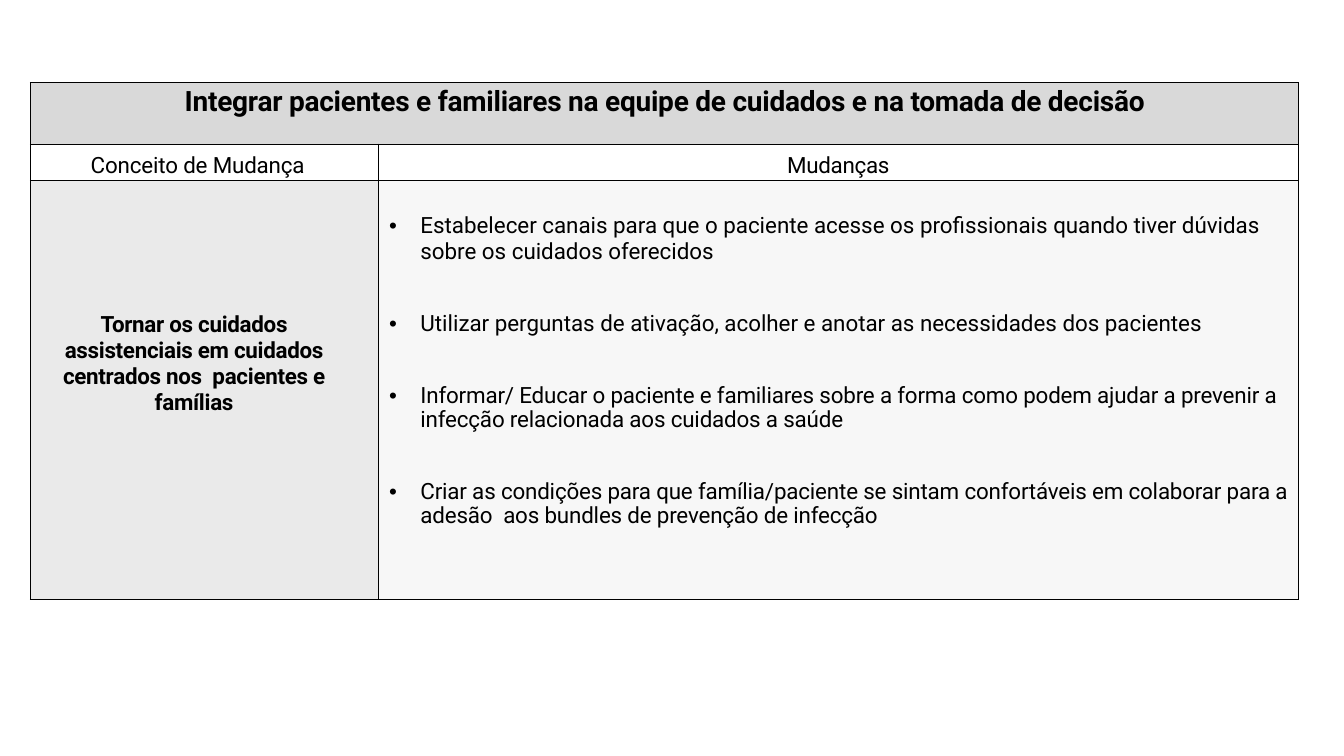
from pptx import Presentation
from pptx.dml.color import RGBColor
from pptx.enum.text import PP_ALIGN
from pptx.oxml.ns import qn
from pptx.util import Inches, Pt
from lxml.etree import SubElement

HEX = {"ink": "000000", "head": "D9D9D9", "plain": "FFFFFF",
       "concept": "EAEAEA", "changes": "F7F7F7"}
FONT = "Roboto"
CHANGES = [
    ("Estabelecer canais para que o paciente acesse os profissionais quando "
     "tiver dúvidas sobre os cuidados oferecidos", 0),
    ("Utilizar perguntas de ativação, acolher e anotar as necessidades "
     "dos pacientes", 0),
    ("Informar/ Educar o paciente e familiares sobre a forma como podem "
     "ajudar a prevenir a infecção relacionada aos cuidados a saúde", -0.1),
    ("Criar as condições para que família/paciente se sintam confortáveis em "
     "colaborar para a adesão  aos bundles de prevenção de infecção", -0.1),
]


def write(para, text, size=16, bold=False, align=PP_ALIGN.LEFT, track=0,
          before=0, line=None, bullet=False):
    para.alignment = align
    para.space_before = Pt(before)
    if line:
        para.line_spacing = Pt(line)
    if bullet:
        props = para._p.get_or_add_pPr()
        props.set("marL", str(Inches(0.42)))
        props.set("indent", str(Inches(-0.31)))
        SubElement(props, qn("a:buFont")).set("typeface", "Arial")
        SubElement(props, qn("a:buChar")).set("char", "•")
    run = para.add_run()
    run.text = text
    font = run.font
    font.name, font.size, font.bold = FONT, Pt(size), bold
    font.color.rgb = RGBColor.from_string(HEX["ink"])
    if track:
        run._r.get_or_add_rPr().set("spc", str(round(track * 100)))


def style(cell, fill, left=0, top=0, right=0, edges=(1, 0.5, 1, 1)):
    """Set margins, borders (left, right, top, bottom) and fill."""
    cell.margin_left, cell.margin_top = Inches(left), Inches(top)
    cell.margin_right, cell.margin_bottom = Inches(right), 0
    props = cell._tc.get_or_add_tcPr()
    for side, width in zip("LRTB", edges):
        edge = SubElement(props, qn(f"a:ln{side}"), w=str(Pt(width)))
        paint = SubElement(edge, qn("a:solidFill"))
        SubElement(paint, qn("a:srgbClr"), val=HEX["ink"])
    cell.fill.solid()
    cell.fill.fore_color.rgb = RGBColor.from_string(HEX[fill])
    return cell.text_frame.paragraphs[0]


def draw_table(slide, x, y, cols, rows):
    frame = slide.shapes.add_table(len(rows), len(cols), Inches(x), Inches(y),
                                   Inches(sum(cols)), Inches(sum(rows)))
    table = frame.table
    table.first_row = table.horz_banding = False
    for col, width in zip(table.columns, cols):
        col.width = Inches(width)
    for row, height in zip(table.rows, rows):
        row.height = Inches(height)
    cell = table.cell

    # Heading across both columns
    cell(0, 0).merge(cell(0, 1))
    style(cell(0, 1), "head", edges=(0.5, 0.5, 0.5, 1))
    write(style(cell(0, 0), "head", top=0.03, edges=(0.5, 0.5, 0.5, 1)),
          "Integrar pacientes e familiares na equipe de cuidados e na tomada "
          "de decisão", size=20, bold=True, align=PP_ALIGN.CENTER, track=-0.2)

    # Column names
    write(style(cell(1, 0), "plain", left=0.6, top=0.09, edges=(0.5, 1, 1, 1)),
          "Conceito de Mudança", track=-0.1)
    write(style(cell(1, 1), "plain", top=0.09), "Mudanças",
          align=PP_ALIGN.CENTER, track=-0.2)

    # Concept
    write(style(cell(2, 0), "concept", left=0.19, top=1.3, right=0.39,
                edges=(0.5, 1, 1, 1)),
          "Tornar os cuidados assistenciais em cuidados centrados nos  "
          "pacientes e famílias", bold=True, align=PP_ALIGN.CENTER, track=-0.2)

    # Changes
    para = style(cell(2, 1), "changes", top=0.32)
    for num, (text, track) in enumerate(CHANGES):
        if num:
            para = cell(2, 1).text_frame.add_paragraph()
        write(para, text, track=track, bullet=True,
              before=34.4 if num else 0, line=17.1 if num else None)


def main():
    deck = Presentation()
    deck.slide_width, deck.slide_height = Inches(13.33), Inches(7.5)
    slide = deck.slides.add_slide(deck.slide_layouts[6])
    draw_table(slide, 0.3, 0.82, cols=(3.45, 9.13), rows=(0.61, 0.36, 4.16))
    deck.save("out.pptx")


if __name__ == "__main__":
    main()
